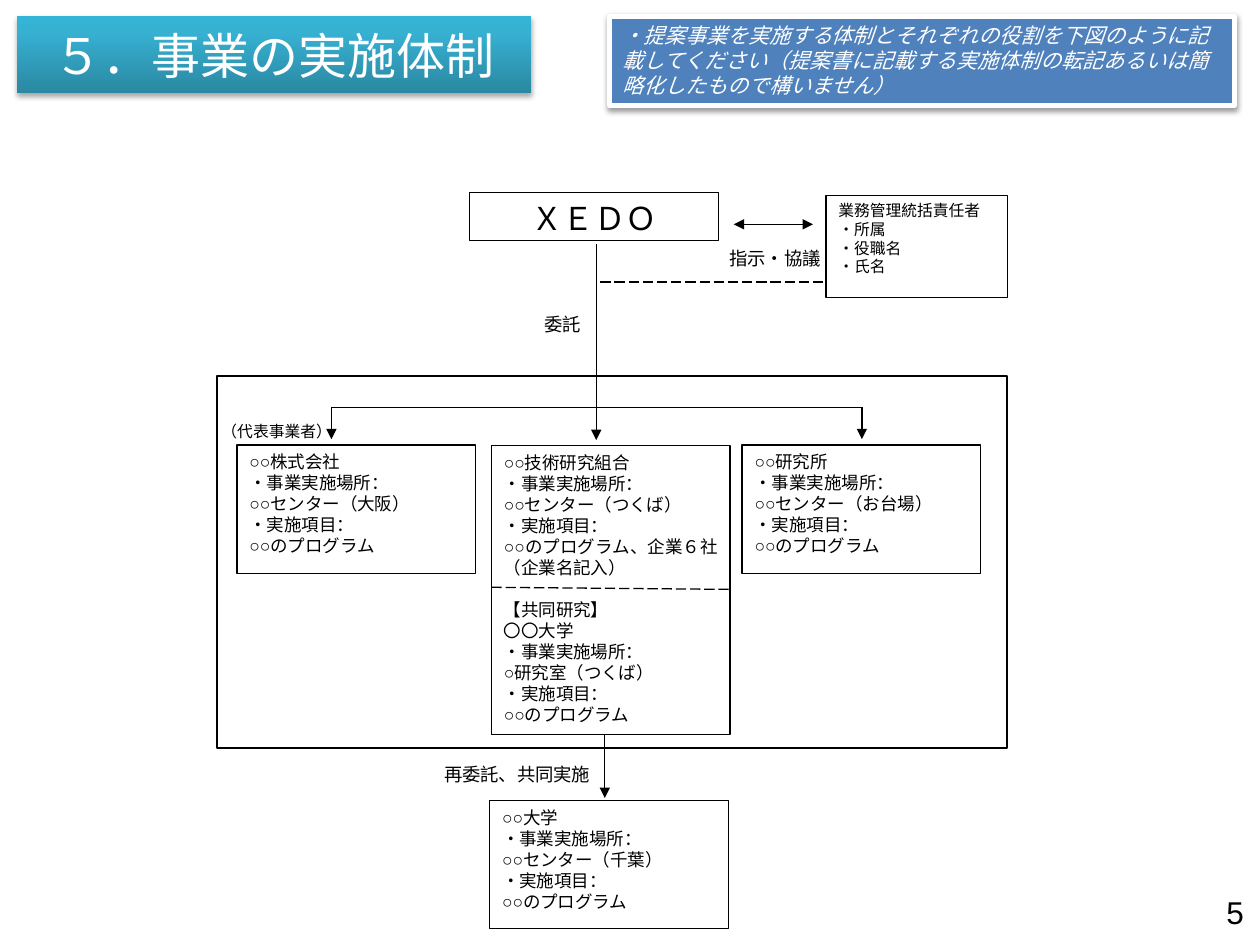
from lxml import etree
from pptx import Presentation
from pptx.dml.color import RGBColor
from pptx.enum import dml, shapes, text
from pptx.oxml import parse_xml
from pptx.oxml.ns import qn
from pptx.util import Pt

INK = {"black": "000000", "white": "FFFFFF", "blue": "4F81BD", "frame": "020000",
       "deep": "2A88A2", "teal": "37B1D2", "light": "34B4D6"}
FONT = "Arial"
NS = 'xmlns:a="http://schemas.openxmlformats.org/drawingml/2006/main"'
ALIGN = text.PP_ALIGN
TOP, MID = text.MSO_ANCHOR.TOP, text.MSO_ANCHOR.MIDDLE


def tint(name):
    return RGBColor.from_string(INK[name])


def add_run(para, words, size, color="black", italic=False, under=False):
    run = para.add_run()
    run.text = words
    font = run.font
    font.size, font.name = Pt(size), FONT
    font.color.rgb = tint(color)
    if italic:
        font.italic = True
    if under:
        font.underline = True
    east = etree.SubElement(run._r.get_or_add_rPr(), qn("a:ea"))
    east.set("typeface", FONT)


def write(shape, lines, size, align=ALIGN.JUSTIFY, anchor=TOP, wrap=True, **look):
    frame = shape.text_frame
    frame.word_wrap = wrap
    frame.vertical_anchor = anchor
    for i, line in enumerate(lines):
        para = frame.paragraphs[0] if i == 0 else frame.add_paragraph()
        para.alignment = align
        add_run(para, line, size, **look)
    return frame


def add_box(slide, at, fill="white", line="black", width=0.75):
    box = slide.shapes.add_shape(shapes.MSO_SHAPE.RECTANGLE, *map(Pt, at))
    box.shadow.inherit = False
    if fill:
        box.fill.solid()
        box.fill.fore_color.rgb = tint(fill)
    else:
        box.fill.background()
    if line:
        box.line.color.rgb = tint(line)
        box.line.width = Pt(width)
    else:
        box.line.fill.background()
    return box


def add_label(slide, at, words, size, **look):
    return write(slide.shapes.add_textbox(*map(Pt, at)), [words], size, **look)


def add_line(slide, start, end, dash=False, ends=("tailEnd",)):
    line = slide.shapes.add_connector(shapes.MSO_CONNECTOR.STRAIGHT,
                                      *map(Pt, (*start, *end)))
    line.line.color.rgb = tint("black")
    line.line.width = Pt(0.75)
    if dash:
        line.line.dash_style = dml.MSO_LINE.LONG_DASH
    for tag in ends:
        etree.SubElement(line.line._get_or_add_ln(), qn("a:" + tag)).set("type", "triangle")
    etree.SubElement(line._element.spPr, qn("a:effectLst"))


def add_shade(shape, alpha, dist):
    effect = shape._element.spPr.find(qn("a:effectLst"))
    effect.append(parse_xml(
        f'<a:outerShdw {NS} blurRad="{Pt(3.1)}" dist="{Pt(dist)}" dir="5400000" '
        f'rotWithShape="0"><a:srgbClr val="{INK["black"]}">'
        f'<a:alpha val="{alpha * 1000}"/></a:srgbClr></a:outerShdw>'))


def add_blend(shape, stops):
    marks = "".join(f'<a:gs pos="{pos * 1000}"><a:srgbClr val="{INK[name]}"/></a:gs>'
                    for pos, name in stops)
    props = shape._element.spPr
    props.replace(props.find(qn("a:solidFill")), parse_xml(
        f'<a:gradFill {NS} rotWithShape="1"><a:gsLst>{marks}</a:gsLst>'
        '<a:lin ang="16200000" scaled="0"/></a:gradFill>'))


def site(name, place, task="○○のプログラム"):
    return [name, "・事業実施場所：", place, "・実施項目：", task]


def add_head(slide):
    title = add_box(slide, (9.5, 9.2, 294, 44), fill="teal", line=None)
    add_blend(title, [(0, "deep"), (80, "teal"), (100, "light")])
    add_shade(title, 35, 1.8)
    write(title, ["５．事業の実施体制"], 28, ALIGN.CENTER, MID, color="white")
    note = add_box(slide, (348.5, 9.3, 357, 51), fill="blue", line="white", width=3)
    add_shade(note, 38, 1.6)
    write(note, ["・提案事業を実施する体制とそれぞれの役割を下図のように記載してください"
                 "（提案書に記載する実施体制の転記あるいは簡略化したもので構いません）"],
          12, ALIGN.LEFT, color="white", italic=True)


def add_chief(slide):
    chief = add_box(slide, (472, 111.6, 103.7, 58.3))
    frame = write(chief, ["業務管理統括責任者", "・所属", "・役職名", "・氏名"], 9)
    frame.margin_top = frame.margin_bottom = Pt(2.9)
    for para in frame.paragraphs[1:]:
        tabs = etree.SubElement(para._p.get_or_add_pPr(), qn("a:tabLst"))
        stop = etree.SubElement(tabs, qn("a:tab"))
        stop.set("pos", str(Pt(75)))
        stop.set("algn", "l")
        add_run(para, "\t", 9, under=True)


def add_sites(slide):
    wide, tall = 136.4, 73.4
    write(add_box(slide, (424.1, 254.2, wide, tall)),
          site("○○研究所", "○○センター（お台場）"), 10)
    write(add_box(slide, (135.4, 254.2, wide, tall)),
          site("○○株式会社", "○○センター（大阪）"), 10)
    joint = site("○○技術研究組合", "○○センター（つくば）",
                 "○○のプログラム、企業６社（企業名記入）")
    partner = ["【共同研究】"] + site("〇〇大学", "○研究室（つくば）")
    frame = write(add_box(slide, (280.8, 254.6, wide, 165)), joint + partner, 10)
    frame.paragraphs[len(joint)].space_before = Pt(12)
    add_line(slide, (280.8, 335.6), (417.2, 336.8), dash=True, ends=())
    write(add_box(slide, (279.8, 457.3, wide, tall)),
          site("○○大学", "○○センター（千葉）"), 10)


def main():
    deck = Presentation()
    deck.slide_width, deck.slide_height = Pt(720), Pt(540)
    slide = deck.slides.add_slide(deck.slide_layouts[6])
    add_head(slide)
    write(add_box(slide, (268.3, 110, 142.5, 27.4)), ["ＸＥＤＯ"], 18, ALIGN.CENTER)
    add_chief(slide)
    add_sites(slide)

    trunk, left, right, bar = 340.7, 189.4, 492.5, 232.7
    add_line(slide, (419.3, 128.2), (464.6, 128.2), ends=("headEnd", "tailEnd"))
    add_line(slide, (343, 161.1), (472, 161.1), dash=True, ends=())
    add_line(slide, (trunk, 139.5), (trunk, 251.5))
    add_line(slide, (left, bar), (right, bar), ends=())
    for x in (left, right):
        add_line(slide, (x, bar), (x, 251))
    add_line(slide, (345.6, 419.8), (345.6, 456))

    add_label(slide, (409.7, 137.5, 73.4, 23.8), "指示・協議", 10.5)
    add_label(slide, (119.5, 237.6, 84.2, 20.9), "（代表事業者）", 9)
    add_label(slide, (303.8, 175.7, 39.6, 23.8), "委託", 10.5)
    add_label(slide, (246.7, 432.7, 100.8, 20.2), "再委託、共同実施", 10.5)
    add_box(slide, (124, 214.8, 451.5, 212.8), fill=None, line="frame", width=1)
    page = add_label(slide, (669, 512, 41.8, 18), "5", 18, align=ALIGN.RIGHT,
                     anchor=MID, wrap=False)
    page.margin_left = page.margin_right = page.margin_top = page.margin_bottom = 0
    deck.save("out.pptx")


if __name__ == "__main__":
    main()
